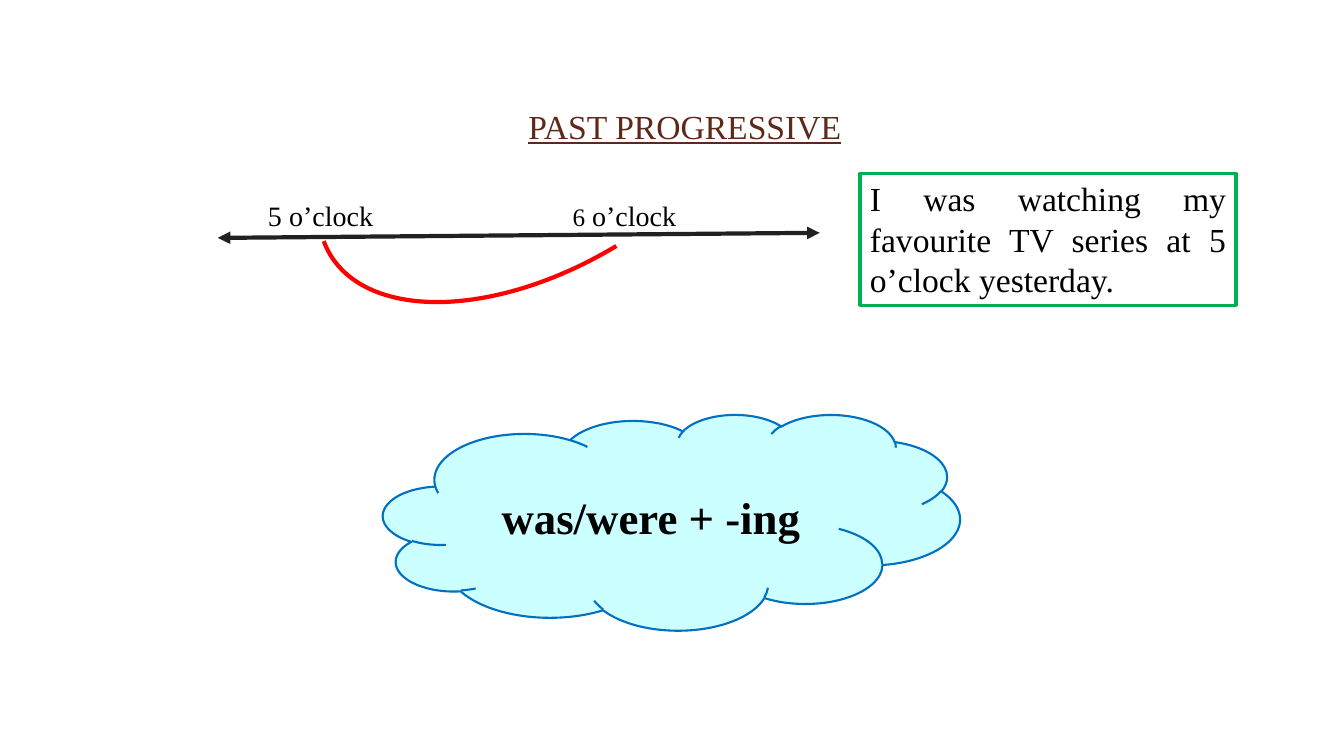
from dataclasses import dataclass

from lxml.etree import SubElement
from pptx import Presentation
from pptx.dml.color import RGBColor
from pptx.enum.shapes import MSO_CONNECTOR, MSO_SHAPE
from pptx.enum.text import MSO_ANCHOR, MSO_AUTO_SIZE, PP_ALIGN
from pptx.oxml.ns import qn
from pptx.util import Inches, Pt


@dataclass(frozen=True)
class Theme:
    font: str = "Times New Roman"
    title: str = "602819"
    ink: str = "000000"
    axis: str = "212121"
    duration: str = "FF0000"
    example: str = "00B050"
    cloud_fill: str = "CCFFFF"
    cloud_line: str = "0070C0"
    body_size: int = 24
    label_size: int = 20
    small_size: int = 18
    formula_size: int = 32


theme = Theme()


def write_text(shape, *runs, color=theme.ink, align=PP_ALIGN.LEFT,
               anchor=MSO_ANCHOR.TOP, wrap=True, bold=False, underline=False):
    frame = shape.text_frame
    frame.auto_size = MSO_AUTO_SIZE.NONE
    frame.word_wrap = wrap
    frame.vertical_anchor = anchor
    paragraph = frame.paragraphs[0]
    paragraph.alignment = align
    for text, size in runs:
        run = paragraph.add_run()
        run.text = text
        run.font.name = theme.font
        run.font.size = Pt(size)
        run.font.bold = bold
        run.font.underline = underline
        run.font.color.rgb = RGBColor.from_string(color)


def style_shape(shape, line, width, fill=None):
    shape.shadow.inherit = False
    shape.line.color.rgb = RGBColor.from_string(line)
    shape.line.width = Pt(width)
    if fill:
        shape.fill.solid()
        shape.fill.fore_color.rgb = RGBColor.from_string(fill)
    else:
        shape.fill.background()


presentation = Presentation()
presentation.slide_width = Inches(13.33)
presentation.slide_height = Inches(7.5)
slide = presentation.slides.add_slide(presentation.slide_layouts[5])
shapes = slide.shapes

title = shapes.title
title.left, title.top = Inches(5.14), Inches(1)
title.width, title.height = Inches(3.49), Inches(0.5)
write_text(title, ("PAST PROGRESSIVE", theme.body_size), color=theme.title, underline=True)

timeline = shapes.add_connector(
    MSO_CONNECTOR.STRAIGHT, Inches(2.16), Inches(2.36), Inches(8.13), Inches(2.31))
timeline.line.color.rgb = RGBColor.from_string(theme.axis)
timeline.line.width = Pt(3)
timeline_line = timeline.line._get_or_add_ln()
for end in ("a:headEnd", "a:tailEnd"):
    SubElement(timeline_line, qn(end), type="triangle")
SubElement(timeline._element.spPr, qn("a:effectLst"))

duration_arc = shapes.add_shape(
    MSO_SHAPE.ARC, Inches(2.92), Inches(-0.14), Inches(4.95), Inches(2.78))
duration_arc.rotation = 148.9
duration_arc.adjustments[0] = 162
duration_arc.adjustments[1] = 2.1
style_shape(duration_arc, theme.duration, 3)

hours = [
    (2.56, 1.24, [("5 o’clock", theme.label_size)]),
    (5.58, 1.29, [("6", theme.small_size), (" o’clock", theme.label_size)]),
]
for left, width, runs in hours:
    label = shapes.add_textbox(Inches(left), Inches(1.92), Inches(width), Inches(0.44))
    write_text(label, *runs, wrap=False)

example = shapes.add_shape(
    MSO_SHAPE.RECTANGLE, Inches(8.53), Inches(1.72), Inches(3.73), Inches(1.31))
style_shape(example, theme.example, 2.25)
write_text(example,
           ("I was watching my favourite TV series at 5 o’clock yesterday.", theme.body_size),
           align=PP_ALIGN.JUSTIFY)

cloud = shapes.add_shape(
    MSO_SHAPE.CLOUD, Inches(3.8), Inches(4.11), Inches(5.72), Inches(2.14))
style_shape(cloud, theme.cloud_line, 1.5, fill=theme.cloud_fill)
write_text(cloud, ("was/were + -ing", theme.formula_size),
           align=PP_ALIGN.CENTER, anchor=MSO_ANCHOR.MIDDLE, bold=True)

presentation.save("out.pptx")
